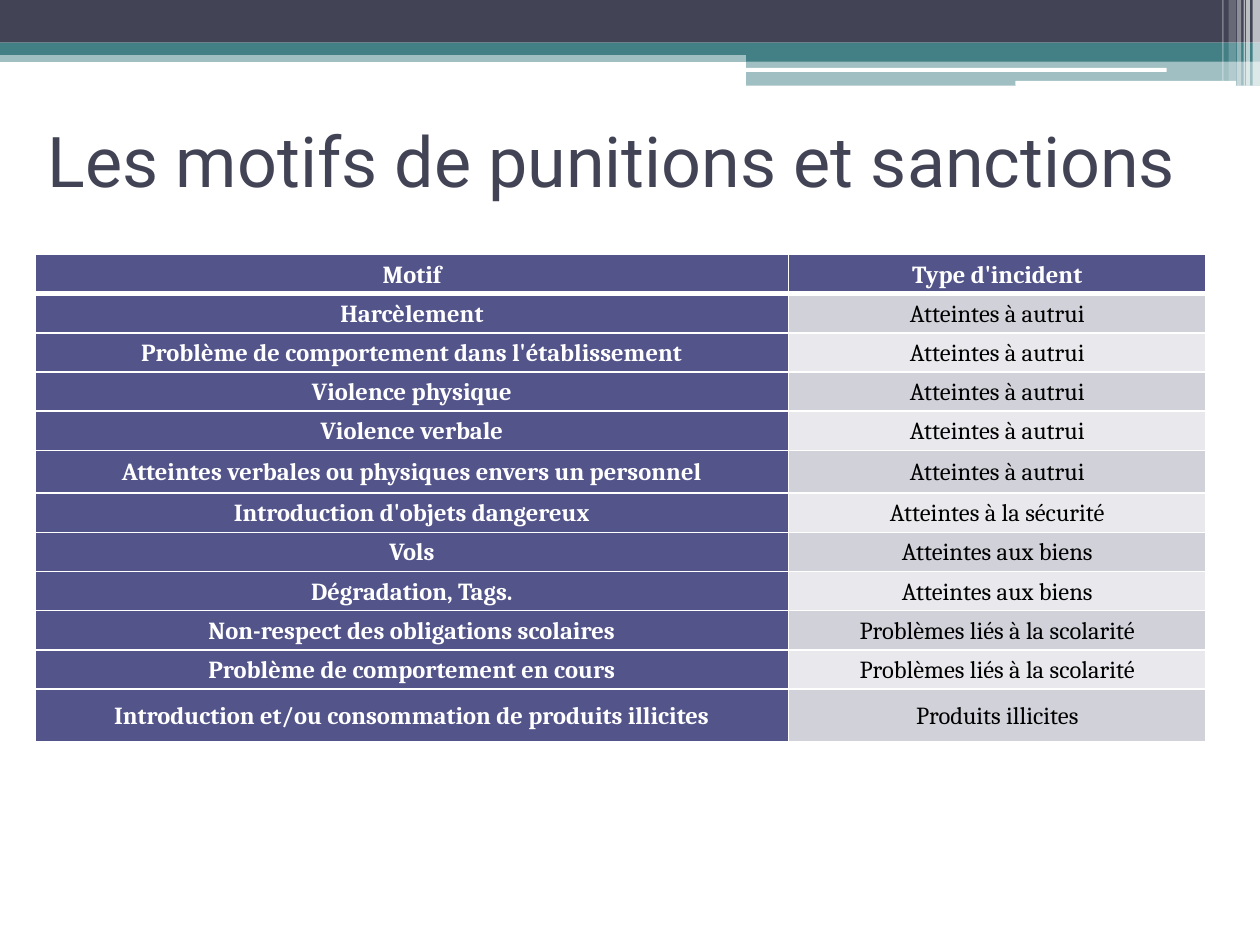
from lxml import etree
from pptx import Presentation
from pptx.dml.color import RGBColor
from pptx.enum.shapes import MSO_SHAPE
from pptx.enum.text import MSO_ANCHOR, PP_ALIGN
from pptx.oxml.ns import qn
from pptx.util import Cm, Pt

RECTANGLE, ROUNDED = MSO_SHAPE.RECTANGLE, MSO_SHAPE.ROUNDED_RECTANGLE
LEFT, CENTER, MIDDLE = PP_ALIGN.LEFT, PP_ALIGN.CENTER, MSO_ANCHOR.MIDDLE
WHITE = RGBColor(0xFF, 0xFF, 0xFF)
BLACK = RGBColor(0, 0, 0)
SLATE = RGBColor(0x42, 0x44, 0x56)
TEAL = RGBColor(0x43, 0x80, 0x86)
PURPLE = RGBColor(0x53, 0x54, 0x8A)
BANDS = RGBColor(0xD1, 0xD1, 0xDA), RGBColor(0xE9, 0xE9, 0xED)

TITLE = "Les motifs de punitions et sanctions"
HEADER = ("Motif", "Type d'incident")
INCIDENTS = [
    ("Harcèlement", "Atteintes à autrui"),
    ("Problème de comportement dans l'établissement", "Atteintes à autrui"),
    ("Violence physique", "Atteintes à autrui"),
    ("Violence verbale", "Atteintes à autrui"),
    ("Atteintes verbales ou physiques envers un personnel", "Atteintes à autrui"),
    ("Introduction d'objets dangereux", "Atteintes à la sécurité"),
    ("Vols", "Atteintes aux biens"),
    ("Dégradation, Tags.", "Atteintes aux biens"),
    ("Non-respect des obligations scolaires", "Problèmes liés à la scolarité"),
    ("Problème de comportement en cours", "Problèmes liés à la scolarité"),
    ("Introduction et/ou consommation de produits illicites", "Produits illicites"),
]
COLUMN_WIDTHS = (15.19, 8.41)
ROW_HEIGHT = 0.79
TALL_ROWS = {5: 0.86, 11: 1.07}

SLIDE_WIDTH, SLIDE_HEIGHT = 25.4, 19.05
TAB_LEFT = 15.04
TAB_WIDTH = SLIDE_WIDTH - TAB_LEFT
BARS = [
    (RECTANGLE, 0, 1.02, SLIDE_WIDTH, 0.23, TEAL, 50),
    (RECTANGLE, 0, 0, SLIDE_WIDTH, 0.86, SLATE, 100),
    (RECTANGLE, 0, 0.86, SLIDE_WIDTH, 0.25, TEAL, 100),
    (RECTANGLE, TAB_LEFT, 0.99, TAB_WIDTH, 0.25, TEAL, 100),
    (RECTANGLE, TAB_LEFT, 1.22, TAB_WIDTH, 0.51, TEAL, 50),
    (ROUNDED, 15.01, 1.37, 8.51, 0.08, WHITE, 100),
    (ROUNDED, 20.47, 1.63, 4.45, 0.1, WHITE, 100),
]
STRIPES = [
    (25.25, 0.15, 1.73, 65),
    (25.12, 0.08, 1.73, 65),
    (25.07, 0.03, 1.73, 60),
    (24.94, 0.08, 1.73, 40),
    (24.77, 0.15, 1.63, 20),
    (24.64, 0.03, 1.63, 30),
]


def write_text(frame, text, *, font, size, color, bold=False, align=LEFT, spacing=None):
    para = frame.paragraphs[0]
    para.alignment = align
    para.line_spacing = spacing
    span = para.add_run()
    span.text = text
    span.font.name = font
    span.font.size = Pt(size)
    span.font.bold = bold
    span.font.color.rgb = color


def add_bar(page, kind, left, top, width, height, color, opacity):
    bar = page.shapes.add_shape(kind, Cm(left), Cm(top), Cm(width), Cm(height))
    bar.shadow.inherit = False
    bar.line.fill.background()
    bar.fill.solid()
    bar.fill.fore_color.rgb = color
    if opacity < 100:
        tint = bar.fill._xPr.find(qn("a:solidFill"))[0]
        etree.SubElement(tint, qn("a:alpha"), val=str(opacity * 1000))


def set_borders(cell, bottom):
    properties = cell._tc.get_or_add_tcPr()
    widths = {"a:lnL": 1, "a:lnR": 1, "a:lnT": 1, "a:lnB": bottom}
    for position, (side, width) in enumerate(widths.items()):
        line = etree.Element(qn(side), w=str(Pt(width)))
        fill = etree.SubElement(line, qn("a:solidFill"))
        etree.SubElement(fill, qn("a:srgbClr"), val=str(WHITE))
        properties.insert(position, line)


def add_incident_table(page):
    rows = [HEADER] + INCIDENTS
    heights = [TALL_ROWS.get(index, ROW_HEIGHT) for index in range(len(rows))]
    table = page.shapes.add_table(
        len(rows), len(HEADER), Cm(0.71), Cm(5.13),
        Cm(sum(COLUMN_WIDTHS)), Cm(sum(heights))).table
    for column, width in zip(table.columns, COLUMN_WIDTHS):
        column.width = Cm(width)
    for row_index, texts in enumerate(rows):
        table.rows[row_index].height = Cm(heights[row_index])
        for column_index, text in enumerate(texts):
            cell = table.cell(row_index, column_index)
            strong = row_index == 0 or column_index == 0
            cell.vertical_anchor = MIDDLE
            cell.margin_left = cell.margin_right = Cm(0.13)
            cell.margin_top = cell.margin_bottom = 0
            cell.fill.solid()
            cell.fill.fore_color.rgb = PURPLE if strong else BANDS[(row_index - 1) % 2]
            set_borders(cell, bottom=3 if row_index == 0 else 1)
            if row_index == 1:
                cell._tc.tcPr.find(qn("a:lnT")).set("w", str(Pt(3)))
            write_text(cell.text_frame, text, font="Cambria", size=14,
                       color=WHITE if strong else BLACK, bold=strong,
                       align=CENTER, spacing=1.07)


def main():
    deck = Presentation()
    deck.slide_width, deck.slide_height = Cm(SLIDE_WIDTH), Cm(SLIDE_HEIGHT)
    page = deck.slides.add_slide(deck.slide_layouts[5])
    for bar in BARS:
        add_bar(page, *bar)
    for left, width, height, opacity in STRIPES:
        add_bar(page, RECTANGLE, left, 0, width, height, WHITE, opacity)

    title = page.shapes.title
    title.left, title.top, title.width, title.height = Cm(0.71), Cm(1.73), Cm(24.41), Cm(2.97)
    title.text_frame.vertical_anchor = MIDDLE
    write_text(title.text_frame, TITLE, font="Roboto", size=40, color=SLATE)
    add_incident_table(page)
    deck.save("out.pptx")


if __name__ == "__main__":
    main()
